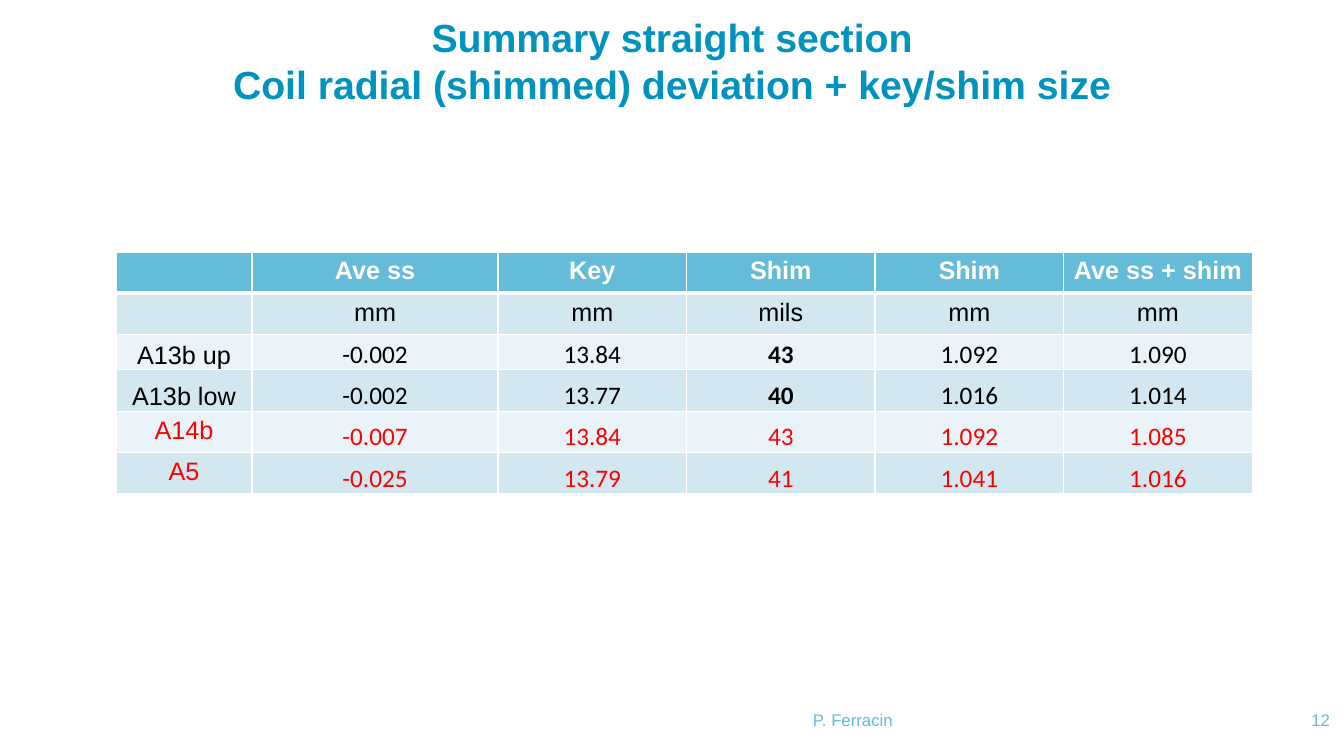
from lxml.etree import SubElement
from pptx import Presentation
from pptx.dml.color import RGBColor
from pptx.enum.text import MSO_ANCHOR as Anchor, PP_ALIGN as Align
from pptx.oxml.ns import qn
from pptx.util import Inches, Pt

WIDTH, HEIGHT = 13.33, 7.5
TITLE = "Summary straight section\nCoil radial (shimmed) deviation + key/shim size"
AUTHOR, PAGE = "P. Ferracin", "12"
HEADER = ["", "Ave ss", "Key", "Shim", "Shim", "Ave ss + shim"]
UNITS = ["", "mm", "mm", "mils", "mm", "mm"]
COILS = [
    ["A13b up", "-0.002", "13.84", "43", "1.092", "1.090"],
    ["A13b low", "-0.002", "13.77", "40", "1.016", "1.014"],
    ["A14b", "-0.007", "13.84", "43", "1.092", "1.085"],
    ["A5", "-0.025", "13.79", "41", "1.041", "1.016"],
]
ROWS = [HEADER, UNITS] + COILS
COLUMN_WIDTHS = [1.35, 2.44] + [1.87] * 4
ROW_HEIGHTS = [0.41, 0.41, 0.35, 0.41, 0.41, 0.41]
TABLE_LEFT, TABLE_TOP = 1.15, 2.5
FIRST_COIL, FIRST_RED, SHIM_MILS = 2, 4, 3
WHITE, BLACK, RED = "FFFFFF", "000000", "FF0000"
TITLE_BLUE, LIGHT_BLUE = "0093BE", "64BCD9"
BANDS = ["D3E7F1", "EAF3F8"]


def color(value):
    return RGBColor.from_string(value)


def write(frame, text, size=18, fill=BLACK, font="Arial", bold=False, align=Align.CENTER):
    paragraph = frame.paragraphs[0]
    paragraph.text = text.replace("\n", "\v")
    paragraph.alignment = align
    for run in paragraph.runs:
        run.font.size = Pt(size)
        run.font.name = font
        run.font.bold = bold
        run.font.color.rgb = color(fill)


def add_text(slide, text, left, top, width, height, anchor, **style):
    frame = slide.shapes.add_textbox(*map(Inches, (left, top, width, height))).text_frame
    frame.word_wrap = True
    frame.vertical_anchor = anchor
    frame.margin_left = frame.margin_top = frame.margin_right = frame.margin_bottom = 0
    write(frame, text, **style)


def add_borders(cell, bottom):
    properties = cell._tc.get_or_add_tcPr()
    for side, width in {"L": 1, "R": 1, "T": 1, "B": bottom}.items():
        line = SubElement(properties, qn(f"a:ln{side}"), w=str(Pt(width)))
        SubElement(SubElement(line, qn("a:solidFill")), qn("a:srgbClr"), val=WHITE)


def fill_cell(cell, text, row, column):
    header = row == 0
    red = row >= FIRST_RED
    value = row >= FIRST_COIL and column > 0
    add_borders(cell, 3 if header else 1)
    cell.fill.solid()
    cell.fill.fore_color.rgb = color(LIGHT_BLUE if header else BANDS[(row - 1) % 2])
    if row >= FIRST_COIL and (value or not red):
        cell.vertical_anchor = Anchor.BOTTOM
        cell.margin_left = cell.margin_top = cell.margin_right = Inches(0.01)
        cell.margin_bottom = 0
    write(
        cell.text_frame,
        text,
        fill=WHITE if header else RED if red else BLACK,
        font="Calibri" if value else "Arial",
        bold=header or (value and column == SHIM_MILS and not red),
    )


def add_coil_table(slide):
    size = (sum(COLUMN_WIDTHS), sum(ROW_HEIGHTS))
    table = slide.shapes.add_table(
        len(ROWS), len(HEADER), *map(Inches, (TABLE_LEFT, TABLE_TOP, *size))
    ).table
    table.horz_banding = False
    for column, width in zip(table.columns, COLUMN_WIDTHS):
        column.width = Inches(width)
    for row, height in zip(table.rows, ROW_HEIGHTS):
        row.height = Inches(height)
    for row, texts in enumerate(ROWS):
        for column, text in enumerate(texts):
            fill_cell(table.cell(row, column), text, row, column)


def main():
    presentation = Presentation()
    presentation.slide_width, presentation.slide_height = Inches(WIDTH), Inches(HEIGHT)
    slide = presentation.slides.add_slide(presentation.slide_layouts[6])
    add_text(slide, TITLE, 0.89, 0.2, 11.55, 0.79, Anchor.MIDDLE,
             size=28, fill=TITLE_BLUE, bold=True)
    footer = {"size": 12, "fill": LIGHT_BLUE}
    add_text(slide, AUTHOR, 4.48, 6.85, 7.96, 0.39, Anchor.BOTTOM, **footer)
    add_text(slide, PAGE, 12.67, 6.85, 0.52, 0.39, Anchor.BOTTOM, align=Align.RIGHT, **footer)
    add_coil_table(slide)
    presentation.save("out.pptx")


if __name__ == "__main__":
    main()
